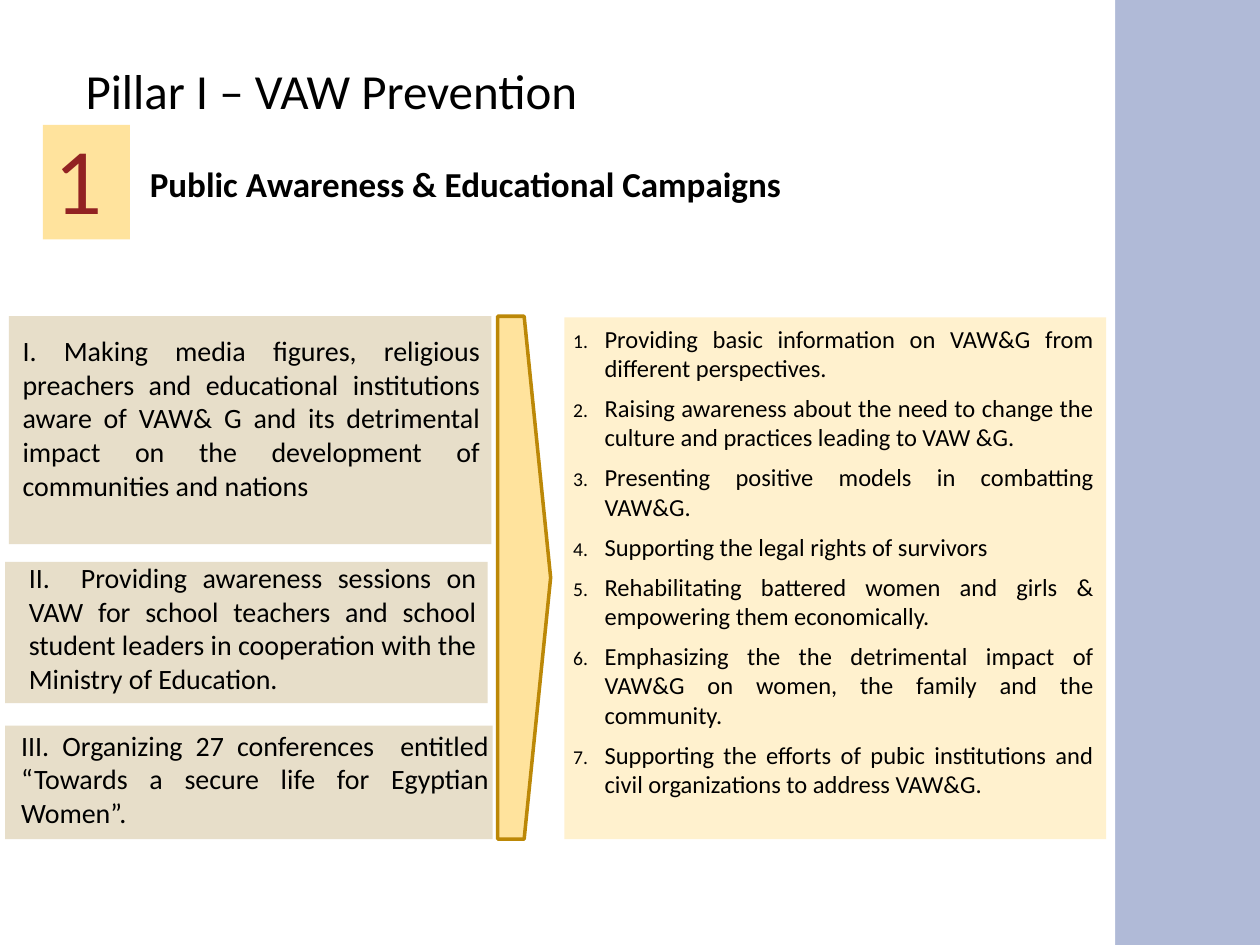
import pptx
import pptx.util
import pptx.dml.color
import pptx.enum.shapes
import pptx.enum.text
import lxml.etree

Inches = pptx.util.Inches
Pt = pptx.util.Pt
RGBColor = pptx.dml.color.RGBColor
ALIGN = pptx.enum.text.PP_ALIGN
ANCHOR = pptx.enum.text.MSO_ANCHOR
SHAPE = pptx.enum.shapes.MSO_SHAPE

LAVENDER = RGBColor(0xB0, 0xBA, 0xD7)
WHITE = RGBColor(0xFF, 0xFF, 0xFF)
BLACK = RGBColor(0, 0, 0)
BEIGE = RGBColor(0xE7, 0xDE, 0xC9)
CREAM = RGBColor(0xFF, 0xF1, 0xCE)
YELLOW = RGBColor(0xFF, 0xE3, 0x9D)
GOLD = RGBColor(0xBC, 0x88, 0x07)
MAROON = RGBColor(0x92, 0x22, 0x22)

ACTIVITIES = [
    ((0.07, 2.51, 3.83, 1.81), (-0.58, 0.09, 4.42, 1.45), 0.59,
     "I. Making media figures, religious preachers and educational institutions "
     "aware of VAW& G and its detrimental impact on the development of "
     "communities and nations"),
    ((0.04, 4.46, 3.83, 1.12), (0, -0.06, 3.84, 1.18), 0.09,
     "II.  Providing awareness sessions on VAW for school teachers and school "
     "student leaders in cooperation with the Ministry of Education. "),
    ((0.04, 5.76, 3.87, 0.9), (-0.06, -0.03, 4, 0.91), 0.09,
     "III. Organizing 27 conferences  entitled “Towards a secure life for "
     "Egyptian Women”."),
]
MESSAGES = [
    "Providing basic information on VAW&G from different perspectives.",
    "Raising awareness about the need to change the culture and practices "
    "leading to VAW &G.",
    "Presenting positive models in combatting VAW&G.",
    "Supporting the legal rights of survivors",
    "Rehabilitating battered women and girls & empowering them economically.",
    "Emphasizing the the detrimental impact of VAW&G on women, the family and "
    "the community.",
    "Supporting the efforts of pubic institutions and civil organizations to "
    "address VAW&G.",
]


def add_block(s, box, fill, kind=SHAPE.RECTANGLE, line=None):
    """Add a flat filled shape, outlined only when a line colour is given."""
    sp = s.shapes.add_shape(kind, *map(Inches, box))
    sp.shadow.inherit = False
    sp.fill.solid()
    sp.fill.fore_color.rgb = fill
    if line is None:
        sp.line.fill.background()
    else:
        sp.line.color.rgb = line
        sp.line.width = Pt(2)
    return sp


def add_textbox(s, box):
    """Add an empty text box."""
    return s.shapes.add_textbox(*map(Inches, box))


def write_text(sp, *texts, size, font="Calibri", color=BLACK, bold=False,
               align=ALIGN.JUSTIFY, anchor=ANCHOR.TOP, left=0, hanging=0,
               gap=0, numbered=False):
    """Write one paragraph per text, with shared formatting."""
    tf = sp.text_frame
    tf.word_wrap = True
    tf.vertical_anchor = anchor
    for i, text in enumerate(texts):
        p = tf.paragraphs[0] if i == 0 else tf.add_paragraph()
        p.alignment = align
        if i:
            p.space_before = Pt(gap)
        pPr = p._p.get_or_add_pPr()
        pPr.set("marL", str(Inches(left)))
        pPr.set("indent", str(Inches(-hanging)))
        if numbered:
            for tag, key, value in (("buSzPct", "val", "80000"),
                                    ("buAutoNum", "type", "arabicPeriod")):
                bullet = lxml.etree.SubElement(pPr, pptx.oxml.ns.qn("a:" + tag))
                bullet.set(key, value)
        r = p.add_run()
        r.text = text
        r.font.name = font
        r.font.size = Pt(size)
        r.font.bold = bold
        r.font.color.rgb = color


def add_header(s, box):
    """Place the title, the number tile and the section heading."""
    x, y, w, h = box
    title = add_textbox(s, (x + 0.09, y, 4.4, 0.55))
    write_text(title, "Pillar I – VAW Prevention", size=28,
               align=ALIGN.CENTER, anchor=ANCHOR.MIDDLE)
    tile = add_block(s, (x, y + 0.55, 0.69, h - 0.55), YELLOW)
    write_text(tile, "1", size=48, font="Lato", color=MAROON, align=ALIGN.LEFT)
    heading = add_textbox(s, (x + 0.75, y + 0.8, w - 0.75, 0.44))
    write_text(heading, "Public Awareness & Educational Campaigns",
               size=20, bold=True)


def add_activity(s, box, text_box, indent, text):
    """Place one activity panel with its text offset from the panel corner."""
    x, y, _, _ = box
    dx, dy, w, h = text_box
    add_block(s, box, BEIGE)
    sp = add_textbox(s, (x + dx, y + dy, w, h))
    write_text(sp, text, size=16, left=indent)


def add_messages(s, box):
    """Place the panel with the numbered messages."""
    x, y, w, h = box
    add_block(s, box, CREAM)
    sp = add_textbox(s, (x - 0.62, y, w + 0.62, h - 0.24))
    write_text(sp, *MESSAGES, size=14, left=0.84, hanging=0.25, gap=6,
               numbered=True)


def main():
    """Build and save the slide."""
    prs = pptx.Presentation()
    prs.slide_width, prs.slide_height = Inches(10), Inches(7.5)
    s = prs.slides.add_slide(prs.slide_layouts[6])
    s.background.fill.solid()
    s.background.fill.fore_color.rgb = LAVENDER
    add_block(s, (0, 0, 8.85, 7.5), WHITE)
    for activity in ACTIVITIES:
        add_activity(s, *activity)
    add_messages(s, (4.48, 2.52, 4.3, 4.14))
    add_block(s, (3.95, 2.51, 0.42, 4.15), YELLOW, SHAPE.PENTAGON, GOLD)
    add_header(s, (0.34, 0.44, 8.17, 1.46))
    prs.save("out.pptx")


if __name__ == "__main__":
    main()
